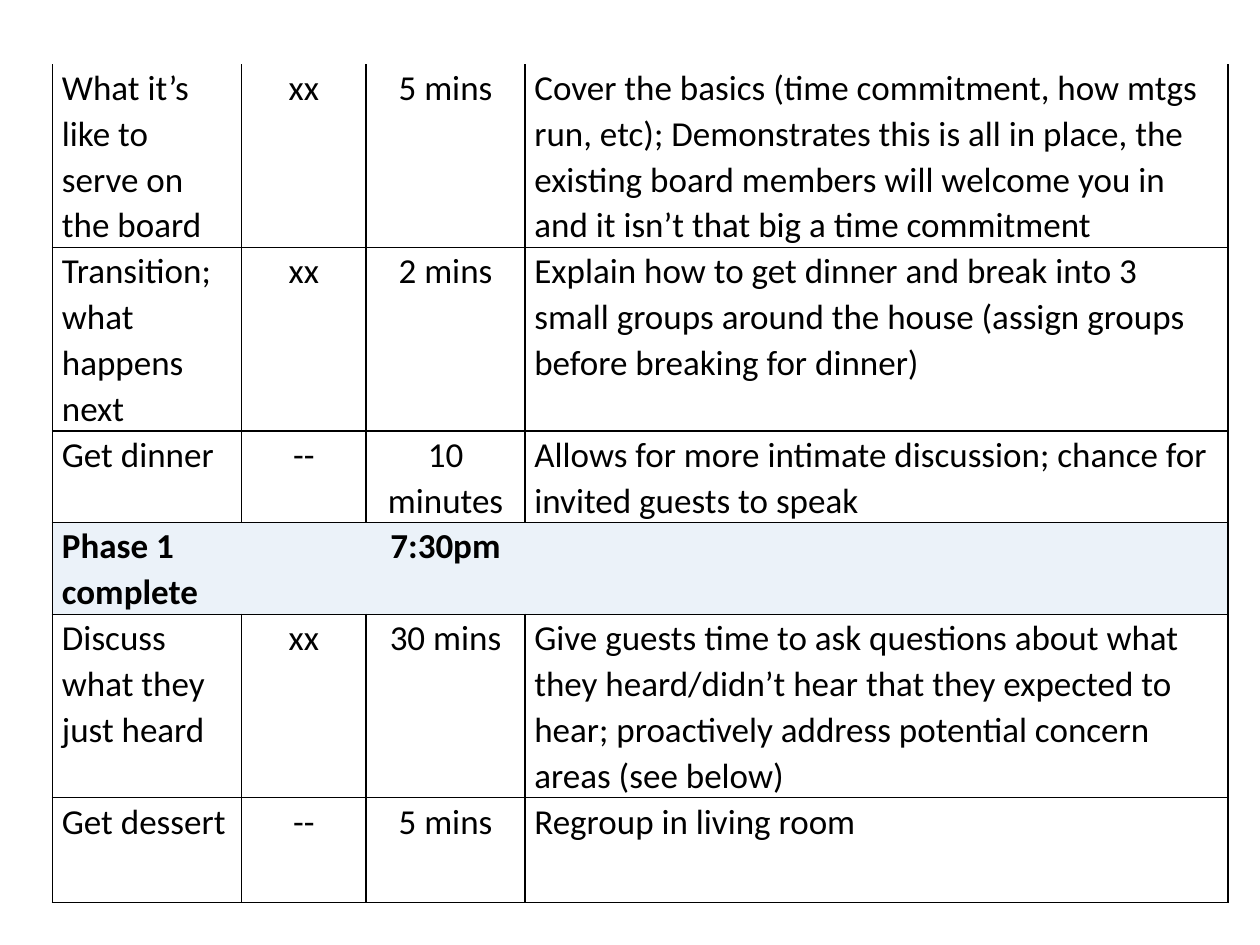
import pptx
import pptx.dml.color
import pptx.enum.text
import pptx.oxml.ns
import pptx.util
import lxml.etree

Pt = pptx.util.Pt
BLACK = pptx.dml.color.RGBColor(0x00, 0x00, 0x00)
PHASE_BLUE = pptx.dml.color.RGBColor(0xEB, 0xF2, 0xF9)
LEFT = pptx.enum.text.PP_ALIGN.LEFT
CENTER = pptx.enum.text.PP_ALIGN.CENTER

COLUMN_WIDTHS = [108, 71.3, 90.7, 401.7]
COLUMN_ALIGNMENTS = [LEFT, CENTER, CENTER, LEFT]
PHASE_ROW = 3
AGENDA = [
    (104.5, ["What it’s like to serve on the board", "xx", "5 mins",
             "Cover the basics (time commitment, how mtgs run, etc); "
             "Demonstrates this is all in place, the existing board members "
             "will welcome you in and it isn’t that big a time commitment"]),
    (104.5, ["Transition; what happens next", "xx", "2 mins",
             "Explain how to get dinner and break into 3 small groups around "
             "the house (assign groups before breaking for dinner)"]),
    (52.3, ["Get dinner", "--", "10 minutes",
            "Allows for more intimate discussion; chance for invited guests to speak"]),
    (52.3, ["Phase 1 complete", "", "7:30pm", ""]),
    (104.5, ["Discuss what they just heard", "xx", "30 mins",
             "Give guests time to ask questions about what they heard/didn’t "
             "hear that they expected to hear; proactively address potential "
             "concern areas (see below)"]),
    (60, ["Get dessert", "--", "5 mins", "Regroup in living room"]),
]


def write_text(cell, text, align=LEFT, bold=False, size=20, color=BLACK):
    cell.margin_left = cell.margin_right = Pt(5.4)
    cell.margin_top = cell.margin_bottom = 0
    paragraph = cell.text_frame.paragraphs[0]
    paragraph.alignment = align
    paragraph.line_spacing = 1.07
    paragraph.font.size = Pt(size)
    if text:
        run = paragraph.add_run()
        run.text = text
        run.font.name = "Calibri"
        run.font.size = Pt(size)
        run.font.bold = bold
        run.font.color.rgb = color


def set_borders(cell, sides):
    qn = pptx.oxml.ns.qn
    properties = cell._tc.get_or_add_tcPr()
    for side in "LRTB":
        border = lxml.etree.SubElement(properties, qn(f"a:ln{side}"), w=str(Pt(1)))
        if side in sides:
            fill = lxml.etree.SubElement(border, qn("a:solidFill"))
            lxml.etree.SubElement(fill, qn("a:srgbClr"), val=str(BLACK))
        else:
            lxml.etree.SubElement(border, qn("a:noFill"))


def cell_sides(row, column):
    sides = "B" if row == 0 else "TB"
    if row != PHASE_ROW or column == 0:
        sides += "L"
    if row != PHASE_ROW or column == len(COLUMN_WIDTHS) - 1:
        sides += "R"
    return sides


def add_agenda(slide, left, top, width, height):
    agenda = slide.shapes.add_table(
        len(AGENDA), len(COLUMN_WIDTHS), Pt(left), Pt(top), Pt(width), Pt(height)).table
    agenda.first_row = False
    agenda.horz_banding = False
    for column, share in zip(agenda.columns, COLUMN_WIDTHS):
        column.width = Pt(width * share / sum(COLUMN_WIDTHS))
    total_height = sum(row_height for row_height, _ in AGENDA)
    for row, (row_height, entries) in enumerate(AGENDA):
        agenda.rows[row].height = Pt(height * row_height / total_height)
        for column, entry in enumerate(entries):
            cell = agenda.cell(row, column)
            write_text(cell, entry, align=COLUMN_ALIGNMENTS[column], bold=row == PHASE_ROW)
            set_borders(cell, cell_sides(row, column))
            if row == PHASE_ROW:
                cell.fill.solid()
                cell.fill.fore_color.rgb = PHASE_BLUE
            else:
                cell.fill.background()


def main():
    presentation = pptx.Presentation()
    presentation.slide_width = Pt(720)
    presentation.slide_height = Pt(540)
    slide = presentation.slides.add_slide(presentation.slide_layouts[6])
    add_agenda(slide, left=30, top=36.6, width=671.7, height=478.1)
    presentation.save("out.pptx")


if __name__ == "__main__":
    main()
